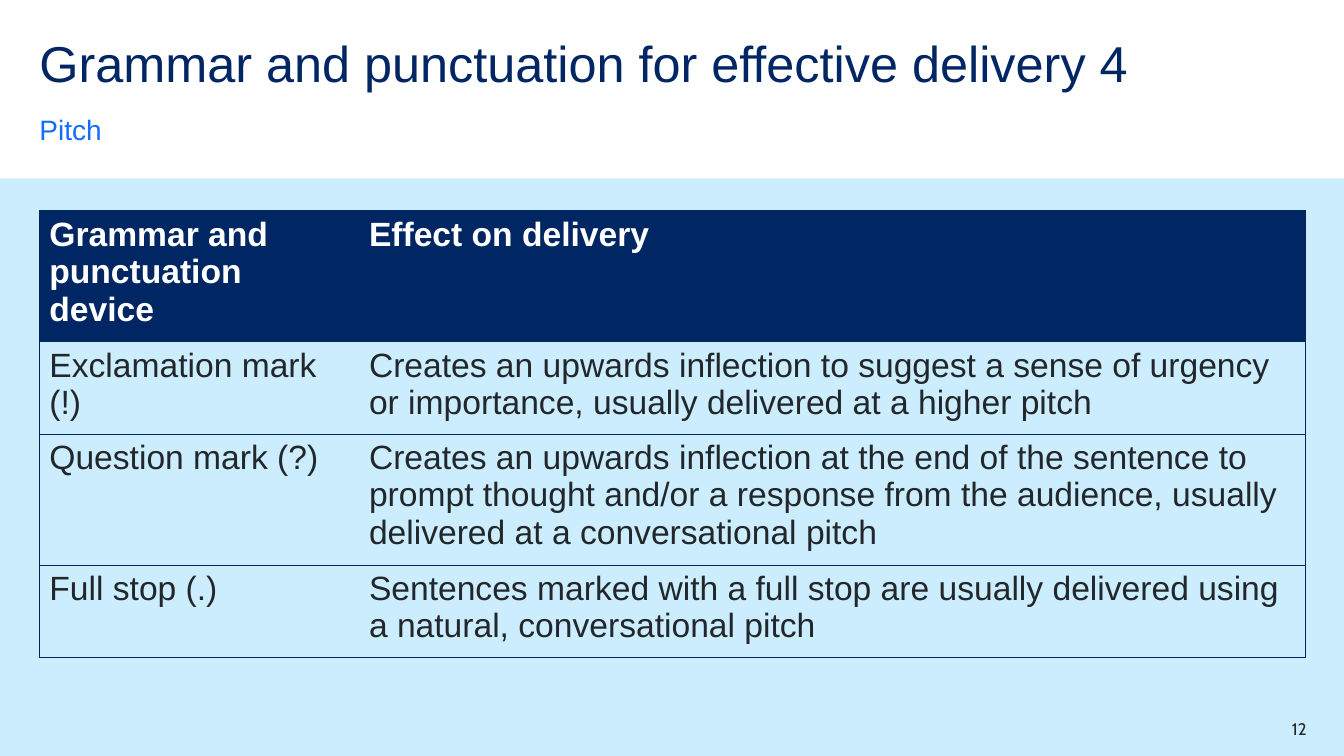
from lxml import etree
from pptx import Presentation
from pptx.dml.color import RGBColor
from pptx.enum import shapes, text
from pptx.oxml.ns import qn
from pptx.util import Inches, Pt

NAVY = RGBColor(0x00, 0x26, 0x64)
BLUE = RGBColor(0x14, 0x6C, 0xFD)
PALE = RGBColor(0xCB, 0xED, 0xFD)
INK = RGBColor(0x22, 0x27, 0x2B)
WHITE = RGBColor(0xFF, 0xFF, 0xFF)

ROWS = [
    ("Grammar and punctuation device", "Effect on delivery"),
    ("Exclamation mark (!)",
     "Creates an upwards inflection to suggest a sense of urgency "
     "or importance, usually delivered at a higher pitch"),
    ("Question mark (?)",
     "Creates an upwards inflection at the end of the sentence to "
     "prompt thought and/or a response from the audience, usually "
     "delivered at a conversational pitch"),
    ("Full stop (.)",
     "Sentences marked with a full stop are usually delivered using "
     "a natural, conversational pitch"),
]
COLS = (3.17, 9.39)


def style(para, size, color, face="Arial", bold=False):
    for run in para.runs:
        font = run.font
        font.size, font.name, font.bold = Pt(size), face, bold
        font.color.rgb = color


def label(slide, box, words, size, color, face="Arial"):
    """Add a one-line text box without margins; return its frame."""
    frame = slide.shapes.add_textbox(*map(Inches, box)).text_frame
    frame.word_wrap = True
    frame.margin_left = frame.margin_right = 0
    frame.margin_top = frame.margin_bottom = 0
    frame.text = words
    style(frame.paragraphs[0], size, color, face)
    return frame


def heading(slide, left, top):
    title = label(slide, (left, top, 11.22, 0.57),
                  "Grammar and punctuation for effective delivery 4", 36, NAVY)
    title.paragraphs[0].line_spacing = 0.9
    topic = label(slide, (left, top + 0.72, 11.02, 0.34), "Pitch", 20, BLUE)
    topic.vertical_anchor = text.MSO_ANCHOR.BOTTOM
    para = topic.paragraphs[0]
    para.line_spacing, para.space_after = 1.5, Pt(12)


def panel(slide, box):
    rect = slide.shapes.add_shape(shapes.MSO_SHAPE.RECTANGLE,
                                  *map(Inches, box))
    rect.shadow.inherit = False
    rect.fill.solid()
    rect.fill.fore_color.rgb = PALE
    rect.line.fill.background()


def border(cell, sides):
    """Rule the given sides of a cell and clear the others."""
    props = cell._tc.get_or_add_tcPr()
    for side in "LRTB":
        line = etree.SubElement(props, qn("a:ln" + side), w=str(Pt(0.5)))
        if side in sides:
            fill = etree.SubElement(line, qn("a:solidFill"))
            etree.SubElement(fill, qn("a:srgbClr"), val=str(NAVY))
        else:
            etree.SubElement(line, qn("a:noFill"))


def devices(slide, box):
    table = slide.shapes.add_table(len(ROWS), len(COLS),
                                   *map(Inches, box)).table
    for col, width in zip(table.columns, COLS):
        col.width = Inches(width)
    for r, row in enumerate(ROWS):
        head = r == 0
        for c, words in enumerate(row):
            cell = table.cell(r, c)
            border(cell, "LTB" if c == 0 else "RTB")
            if head:
                cell.fill.solid()
                cell.fill.fore_color.rgb = NAVY
            else:
                cell.fill.background()
            cell.text_frame.text = words
            style(cell.text_frame.paragraphs[0], 24,
                  WHITE if head else INK, bold=head)


def number(slide, box):
    frame = label(slide, box, "12", 12, INK, "Cabin")
    frame.paragraphs[0].alignment = text.PP_ALIGN.RIGHT


def main():
    deck = Presentation()
    deck.slide_width, deck.slide_height = Inches(13.33), Inches(7.5)
    slide = deck.slides.add_slide(deck.slide_layouts[6])
    panel(slide, (0, 1.77, 13.33, 5.73))
    number(slide, (12.17, 7.13, 0.79, 0.2))
    devices(slide, (0.39, 2.09, sum(COLS), 3.66))
    heading(slide, 0.39, 0.39)
    deck.save("out.pptx")


if __name__ == "__main__":
    main()
